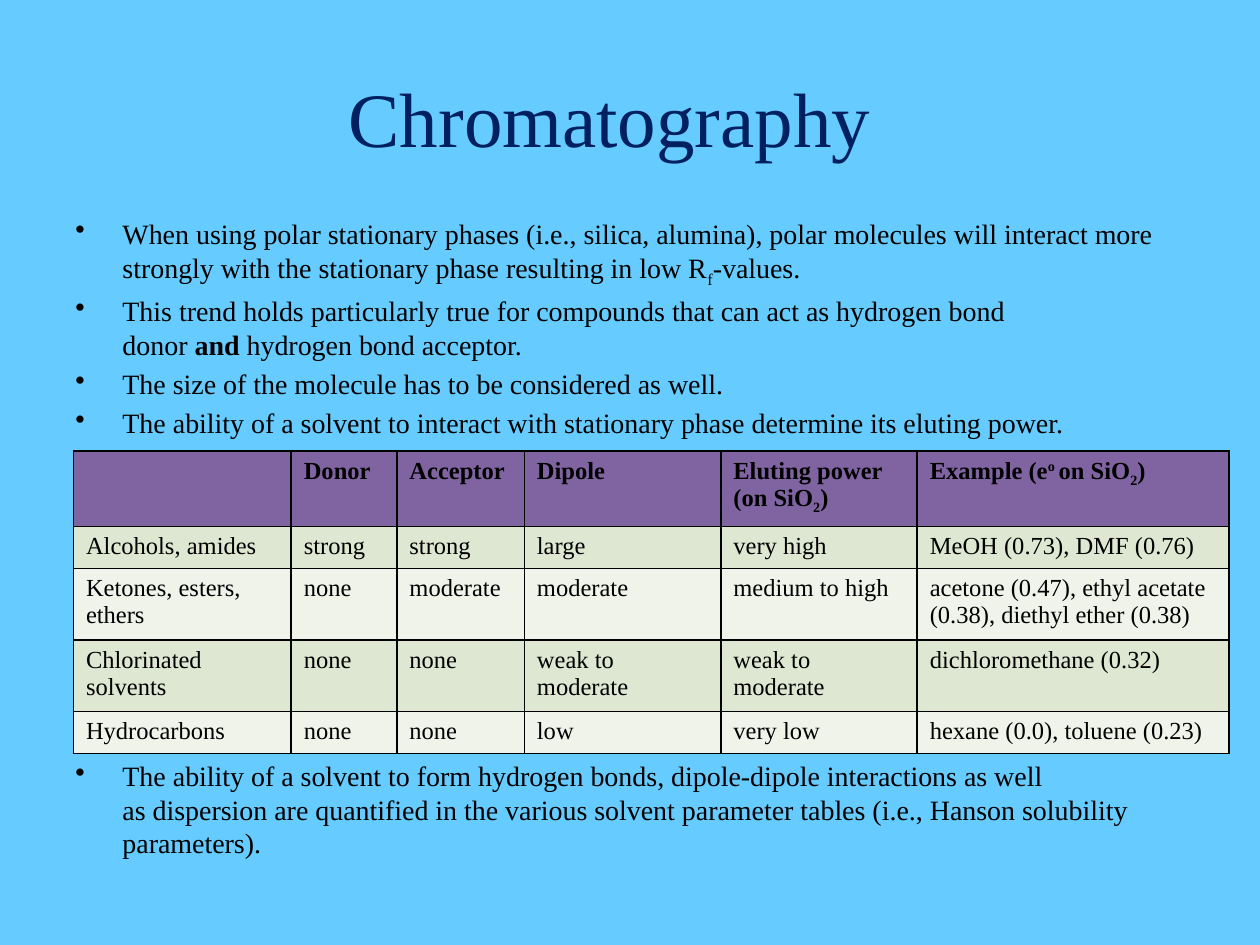
from dataclasses import dataclass

from lxml.etree import SubElement
from pptx import Presentation
from pptx.dml.color import RGBColor
from pptx.enum.text import MSO_ANCHOR, PP_ALIGN
from pptx.oxml.ns import qn
from pptx.util import Cm, Pt


@dataclass(frozen=True)
class Theme:
    font: str = "Times New Roman"
    background: str = "66CCFF"
    title: str = "002060"
    ink: str = "000000"
    header: str = "8064A2"
    bands: tuple = ("DEE7D1", "EFF3EA")
    title_size: float = 44
    body_size: float = 16
    table_size: float = 14


THEME = Theme()
SUB, SUPER, BOLD = "sub", "super", "bold"
BASELINES = {SUB: "-25000", SUPER: "30000"}
BULLET_GAP = Pt(3.2)
TABLE_GAP = Pt(182.5)  # room for the table between the bullets

# Each paragraph is a list of spans: plain text or (text, style)
BULLETS = [
    ["When using polar stationary phases (i.e., silica, alumina), polar molecules "
     "will interact more strongly with the stationary phase resulting in low R",
     ("f", SUB), "-values."],
    ["This trend holds particularly true for compounds that can act as hydrogen bond \n"
     "donor ", ("and", BOLD), " hydrogen bond acceptor."],
    ["The size of the molecule has to be considered as well."],
    ["The ability of a solvent to interact with stationary phase determine its "
     "eluting power."],
    ["The ability of a solvent to form hydrogen bonds, dipole-dipole interactions as well \n"
     "as dispersion are quantified in the various solvent parameter tables "
     "(i.e., Hanson solubility parameters)."],
]
HEADER = [
    [], ["Donor"], ["Acceptor"], ["Dipole"],
    ["Eluting power (on SiO", ("2", SUB), ")"],
    ["Example (e", ("o ", SUPER), "on SiO", ("2", SUB), ")"],
]
SOLVENTS = [
    ["Alcohols, amides", "strong", "strong", "large", "very high",
     "MeOH (0.73), DMF (0.76)"],
    ["Ketones, esters, ethers", "none", "moderate", "moderate", "medium to high",
     "acetone (0.47), ethyl acetate (0.38), diethyl ether (0.38)"],
    ["Chlorinated solvents", "none", "none", "weak to moderate", "weak to moderate",
     "dichloromethane (0.32)"],
    ["Hydrocarbons", "none", "none", "low", "very low",
     "hexane (0.0), toluene (0.23)"],
]
COLUMN_WIDTHS = [4.39, 2.13, 2.57, 3.96, 3.96, 6.29]
ROW_HEIGHTS = [1.43, 0.85, 1.34, 1.34, 0.85]


def color(code):
    return RGBColor.from_string(code)


def style_paragraph(para, size, code, bold=False):
    font = para.font
    font.name, font.size, font.bold = THEME.font, Pt(size), bold
    font.color.rgb = color(code)


def add_spans(para, spans):
    for item in spans:
        text, style = (item, None) if isinstance(item, str) else item
        for index, line in enumerate(text.split("\n")):
            if index:
                para.add_line_break()
            span = para.add_run()
            span.text = line
            if style == BOLD:
                span.font.bold = True
            elif style:
                span._r.get_or_add_rPr().set("baseline", BASELINES[style])


def add_bullet(para):
    props = para._p.get_or_add_pPr()
    props.set("marL", str(Cm(0.95)))
    props.set("indent", str(-Cm(0.95)))
    bullet = SubElement(props, qn("a:buChar"))
    bullet.set("char", "•")
    # The bullet has to come before the default run properties
    defaults = props.find(qn("a:defRPr"))
    if defaults is not None:
        defaults.addprevious(bullet)


def add_borders(cell):
    props = cell._tc.get_or_add_tcPr()
    for index, side in enumerate(("a:lnL", "a:lnR", "a:lnT", "a:lnB")):
        line = SubElement(props, qn(side), w=str(Pt(1)))
        fill = SubElement(line, qn("a:solidFill"))
        SubElement(fill, qn("a:srgbClr"), val=THEME.ink)
        props.insert(index, line)


def set_title(page, text):
    title = page.shapes.title
    title.left, title.top, title.width, title.height = (
        Cm(1.27), Cm(0.76), Cm(22.86), Cm(3.18))
    frame = title.text_frame
    frame.text = text
    frame.vertical_anchor = MSO_ANCHOR.MIDDLE
    frame.margin_right = Cm(1.07)  # sets the title a little left of centre
    para = frame.paragraphs[0]
    para.alignment = PP_ALIGN.CENTER
    style_paragraph(para, THEME.title_size, THEME.title)


def add_bullets(page, bullets):
    box = page.shapes.add_textbox(Cm(1.27), Cm(4.24), Cm(23.29), Cm(14.17))
    frame = box.text_frame
    frame.word_wrap = True
    for index, spans in enumerate(bullets):
        para = frame.paragraphs[0] if index == 0 else frame.add_paragraph()
        para.space_before = TABLE_GAP if index == len(bullets) - 1 else BULLET_GAP
        style_paragraph(para, THEME.body_size, THEME.ink)
        add_bullet(para)
        add_spans(para, spans)


def add_solvent_table(page):
    rows = [HEADER] + [[[text] for text in row] for row in SOLVENTS]
    frame = page.shapes.add_table(
        len(rows), len(HEADER), Cm(1.48), Cm(9.09),
        Cm(sum(COLUMN_WIDTHS)), Cm(sum(ROW_HEIGHTS)))
    table = frame.table
    for column, width in zip(table.columns, COLUMN_WIDTHS):
        column.width = Cm(width)
    for number, (row, height, contents) in enumerate(
            zip(table.rows, ROW_HEIGHTS, rows)):
        row.height = Cm(height)
        is_header = number == 0
        fill = THEME.header if is_header else THEME.bands[(number - 1) % 2]
        for cell, spans in zip(row.cells, contents):
            cell.fill.solid()
            cell.fill.fore_color.rgb = color(fill)
            add_borders(cell)
            para = cell.text_frame.paragraphs[0]
            style_paragraph(para, THEME.table_size, THEME.ink, is_header)
            add_spans(para, spans)


def main():
    deck = Presentation()
    deck.slide_width, deck.slide_height = Cm(25.4), Cm(19.05)
    page = deck.slides.add_slide(deck.slide_layouts[5])
    page.background.fill.solid()
    page.background.fill.fore_color.rgb = color(THEME.background)

    # Heading, bullets, then the table over the gap in the bullets
    set_title(page, "Chromatography")
    add_bullets(page, BULLETS)
    add_solvent_table(page)
    deck.save("out.pptx")


if __name__ == "__main__":
    main()
